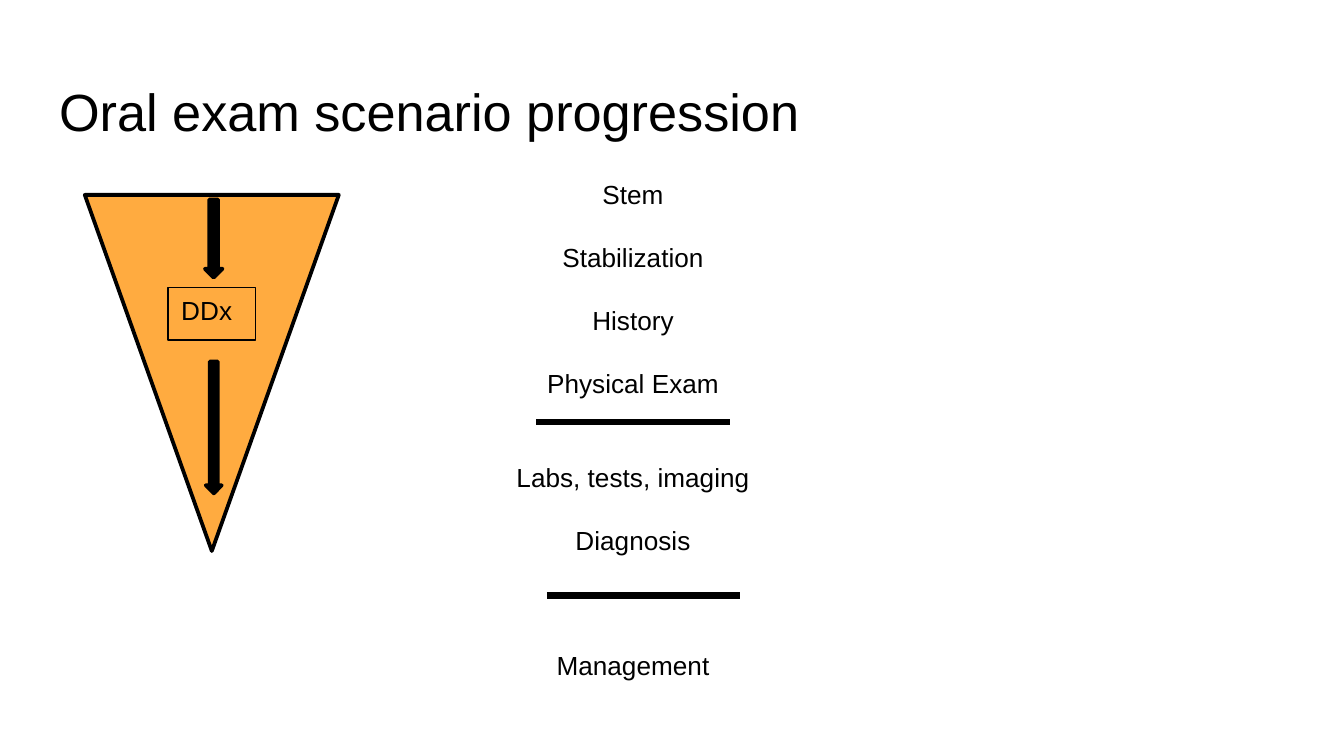
import pptx
import pptx.util
import pptx.dml.color
import pptx.enum.shapes
import pptx.enum.text
import pptx.oxml.ns
import lxml.etree

Pt = pptx.util.Pt
Shapes = pptx.enum.shapes.MSO_SHAPE
Align = pptx.enum.text.PP_ALIGN
Anchor = pptx.enum.text.MSO_ANCHOR
AutoSize = pptx.enum.text.MSO_AUTO_SIZE
qn = pptx.oxml.ns.qn

TITLE = "Oral exam scenario progression"
FOCUS = "DDx"
STEPS = [
    ("Stem", 0),
    ("Stabilization", 1),
    ("History", 1),
    ("Physical Exam", 1),
    ("Labs, tests, imaging", 2),
    ("Diagnosis", 1),
    ("Management", 3),
]
DIVIDERS = [(287.3, 226.1), (293, 319)]
DIVIDER_LENGTH = 103.7
ARROWS = [(127.8, 41.8, 9.4), (229, 70.6, 8.6)]
ARROW_CENTER = 114.5

THEME = {
    "font": "Arial",
    "ink": "000000",
    "funnel": "FFAB40",
    "title": 28,
    "body": 14,
    "pitch": 16.8,
    "thin": 0.75,
    "outline": 2,
    "divider": 3.5,
}


def color(name):
    return pptx.dml.color.RGBColor.from_string(THEME[name])


def place(part, left, top, width, height):
    part.left, part.top, part.width, part.height = map(Pt, (left, top, width, height))


def write(paragraph, text, size="body", align=Align.LEFT, before=0, pitch=None):
    paragraph.alignment = align
    paragraph.space_before = Pt(before)
    paragraph.space_after = Pt(0)
    paragraph.line_spacing = Pt(pitch) if pitch else 1.0
    run = paragraph.add_run()
    run.text = text
    run.font.name = THEME["font"]
    run.font.size = Pt(THEME[size])
    run.font.color.rgb = color("ink")


def draw(parent, kind, box, fill=None, line="outline", rotation=0):
    shape = parent.add_shape(kind, *map(Pt, box))
    shape.shadow.inherit = False
    shape.rotation = rotation
    if fill:
        shape.fill.solid()
        shape.fill.fore_color.rgb = color(fill)
    else:
        shape.fill.background()
    shape.line.color.rgb = color("ink")
    shape.line.width = Pt(THEME[line])
    lxml.etree.SubElement(shape.line._get_or_add_ln(), qn("a:round"))
    return shape


def add_title(slide):
    title = slide.shapes.title
    place(title, 24.5, 35.3, 671, 45.4)
    frame = title.text_frame
    frame.auto_size = AutoSize.NONE
    frame.vertical_anchor = Anchor.TOP
    frame.margin_left = frame.margin_right = frame.margin_top = frame.margin_bottom = Pt(7.2)
    write(frame.paragraphs[0], TITLE, size="title")


def add_funnel(slide):
    funnel = slide.shapes.add_group_shape().shapes
    draw(funnel, Shapes.ISOSCELES_TRIANGLE, (45.4, 104.4, 136.1, 190.8), "funnel", rotation=180)
    focus = draw(funnel, Shapes.RECTANGLE, (90, 154.1, 46.8, 28.1), line="thin")
    focus.text_frame.vertical_anchor = Anchor.TOP
    write(focus.text_frame.paragraphs[0], FOCUS)


def add_steps(slide):
    steps = slide.placeholders[1]
    place(steps, 269.3, 92.2, 139.7, 278.6)
    frame = steps.text_frame
    frame.word_wrap = False
    frame.auto_size = AutoSize.SHAPE_TO_FIT_TEXT
    frame.vertical_anchor = Anchor.TOP
    for index, (step, gap) in enumerate(STEPS):
        paragraph = frame.add_paragraph() if index else frame.paragraphs[0]
        write(paragraph, step, align=Align.CENTER, before=gap * THEME["pitch"], pitch=THEME["pitch"])
        properties = paragraph._p.get_or_add_pPr()
        properties.set("marL", "0")
        properties.set("indent", "0")
        lxml.etree.SubElement(properties, qn("a:buNone"))


def add_dividers(slide):
    for left, top in DIVIDERS:
        divider = slide.shapes.add_connector(
            pptx.enum.shapes.MSO_CONNECTOR.STRAIGHT,
            Pt(left), Pt(top), Pt(left + DIVIDER_LENGTH), Pt(top))
        divider.line.color.rgb = color("ink")
        divider.line.width = Pt(THEME["divider"])
        lxml.etree.SubElement(divider._element.spPr, qn("a:effectLst"))


def add_arrows(slide):
    for middle, length, thickness in ARROWS:
        box = (ARROW_CENTER - length / 2, middle - thickness / 2, length, thickness)
        draw(slide.shapes, Shapes.RIGHT_ARROW, box, "ink", rotation=90)


def main():
    deck = pptx.Presentation()
    deck.slide_width, deck.slide_height = Pt(720), Pt(405)
    slide = deck.slides.add_slide(deck.slide_layouts[1])
    add_title(slide)
    add_funnel(slide)
    add_steps(slide)
    add_dividers(slide)
    add_arrows(slide)
    deck.save("out.pptx")


if __name__ == "__main__":
    main()
